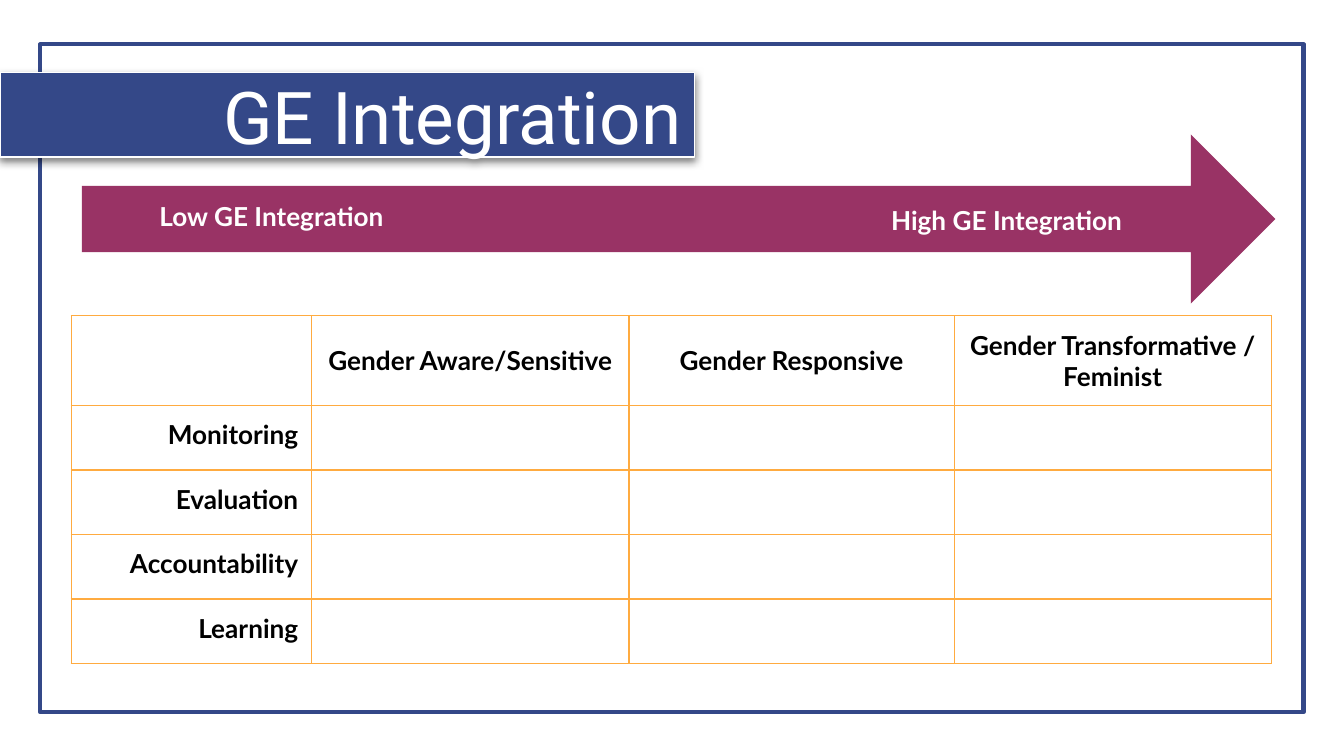
"""Build the GE Integration slide: title banner, scale arrow and MEAL matrix."""
from lxml import etree
from pptx import Presentation
from pptx.dml.color import RGBColor
from pptx.enum.shapes import MSO_SHAPE
from pptx.enum.text import MSO_ANCHOR, PP_ALIGN
from pptx.oxml import parse_xml
from pptx.oxml.ns import nsdecls, qn
from pptx.util import Inches, Pt

RECTANGLE, RIGHT_ARROW = MSO_SHAPE.RECTANGLE, MSO_SHAPE.RIGHT_ARROW
TOP, MIDDLE = MSO_ANCHOR.TOP, MSO_ANCHOR.MIDDLE
CENTER, RIGHT = PP_ALIGN.CENTER, PP_ALIGN.RIGHT

SLIDE_WIDTH = 10
SLIDE_HEIGHT = SLIDE_WIDTH * 9 / 16
TITLE = "GE Integration"
SCALE_LABELS = [
    ("Low GE Integration", 0.85, 1.39),
    ("High GE Integration", 6.32, 1.42),
]
MATRIX = [
    ["", "Gender Aware/Sensitive", "Gender Responsive", "Gender Transformative / Feminist"],
    ["Monitoring", "", "", ""],
    ["Evaluation", "", "", ""],
    ["Accountability", "", "", ""],
    ["Learning", "", "", ""],
]
COLUMN_WIDTHS = [1.79, 2.36, 2.42, 2.36]
HEADER_HEIGHT, ROW_HEIGHT = 0.66, 0.48
MATRIX_LEFT, MATRIX_TOP = 0.53, 2.35

THEME = {
    "blue": "344888", "plum": "993365", "orange": "FFAB40",
    "white": "FFFFFF", "black": "000000",
    "title_font": "Roboto", "body_font": "Lato",
    "title_size": 39, "body_size": 14,
    "frame_line": 2.25, "thin_line": 0.75, "inset": 0.1,
}


def color(name):
    return RGBColor.from_string(THEME[name])


def style_paragraph(paragraph, role, color_name, alignment):
    paragraph.alignment = alignment
    font = paragraph.font
    font.name = THEME[f"{role}_font"]
    font.size = Pt(THEME[f"{role}_size"])
    font.bold = role == "body"
    font.color.rgb = color(color_name)


def set_insets(holder):
    inset = Inches(THEME["inset"])
    holder.margin_left = holder.margin_right = inset
    holder.margin_top = holder.margin_bottom = inset


def write_text(shape, text, role, alignment, anchor):
    frame = shape.text_frame
    frame.word_wrap = True
    frame.vertical_anchor = anchor
    set_insets(frame)
    frame.text = text
    style_paragraph(frame.paragraphs[0], role, "white", alignment)


def add_block(slide, kind, box, fill=None, line=None, width=0):
    shape = slide.shapes.add_shape(kind, *map(Inches, box))
    shape.shadow.inherit = False
    if fill:
        shape.fill.solid()
        shape.fill.fore_color.rgb = color(fill)
    else:
        shape.fill.background()
    if line:
        shape.line.color.rgb = color(line)
        shape.line.width = Pt(width)
    else:
        shape.line.fill.background()
    return shape


def add_drop_shadow(shape):
    effects = shape._element.spPr.find(qn("a:effectLst"))
    shadow = etree.SubElement(
        effects, qn("a:outerShdw"), blurRad=str(Pt(4.5)), dist=str(Pt(1.5)),
        dir="5400000", algn="bl", rotWithShape="0")
    tint = etree.SubElement(shadow, qn("a:srgbClr"), val=THEME["black"])
    etree.SubElement(tint, qn("a:alpha"), val="49000")


def add_borders(cell):
    properties = cell._tc.get_or_add_tcPr()
    for index, side in enumerate(("lnL", "lnR", "lnT", "lnB")):
        properties.insert(index, parse_xml(
            f'<a:{side} {nsdecls("a")} w="{Pt(THEME["thin_line"])}"><a:solidFill>'
            f'<a:srgbClr val="{THEME["orange"]}"/></a:solidFill></a:{side}>'))


def add_matrix(slide):
    heights = [HEADER_HEIGHT] + [ROW_HEIGHT] * (len(MATRIX) - 1)
    box = (MATRIX_LEFT, MATRIX_TOP, sum(COLUMN_WIDTHS), sum(heights))
    table = slide.shapes.add_table(
        len(MATRIX), len(COLUMN_WIDTHS), *map(Inches, box)).table
    for column, width in zip(table.columns, COLUMN_WIDTHS):
        column.width = Inches(width)
    for row_index, (row, height) in enumerate(zip(table.rows, heights)):
        row.height = Inches(height)
        for cell, text in zip(row.cells, MATRIX[row_index]):
            is_header = row_index == 0
            cell.text = text
            cell.fill.background()
            cell.vertical_anchor = MIDDLE if is_header else TOP
            set_insets(cell)
            add_borders(cell)
            style_paragraph(cell.text_frame.paragraphs[0], "body", "black",
                            CENTER if is_header else RIGHT)


def main():
    presentation = Presentation()
    presentation.slide_width = Inches(SLIDE_WIDTH)
    presentation.slide_height = Inches(SLIDE_HEIGHT)
    slide = presentation.slides.add_slide(presentation.slide_layouts[6])

    arrow = add_block(slide, RIGHT_ARROW, (0.61, 1, 8.88, 1.26), fill="plum")
    arrow.adjustments[0], arrow.adjustments[1] = 0.39, 0.5
    add_block(slide, RECTANGLE, (0.3, 0.33, 9.4, 4.97),
              line="blue", width=THEME["frame_line"])
    add_matrix(slide)

    banner = add_block(slide, RECTANGLE, (0, 0.54, 5.17, 0.63),
                       fill="blue", line="white", width=THEME["thin_line"])
    add_drop_shadow(banner)
    write_text(banner, TITLE, "title", RIGHT, MIDDLE)

    for text, left, top in SCALE_LABELS:
        label = slide.shapes.add_textbox(*map(Inches, (left, top, 2.34, 0.38)))
        write_text(label, text, "body", CENTER, TOP)

    presentation.save("out.pptx")


if __name__ == "__main__":
    main()
